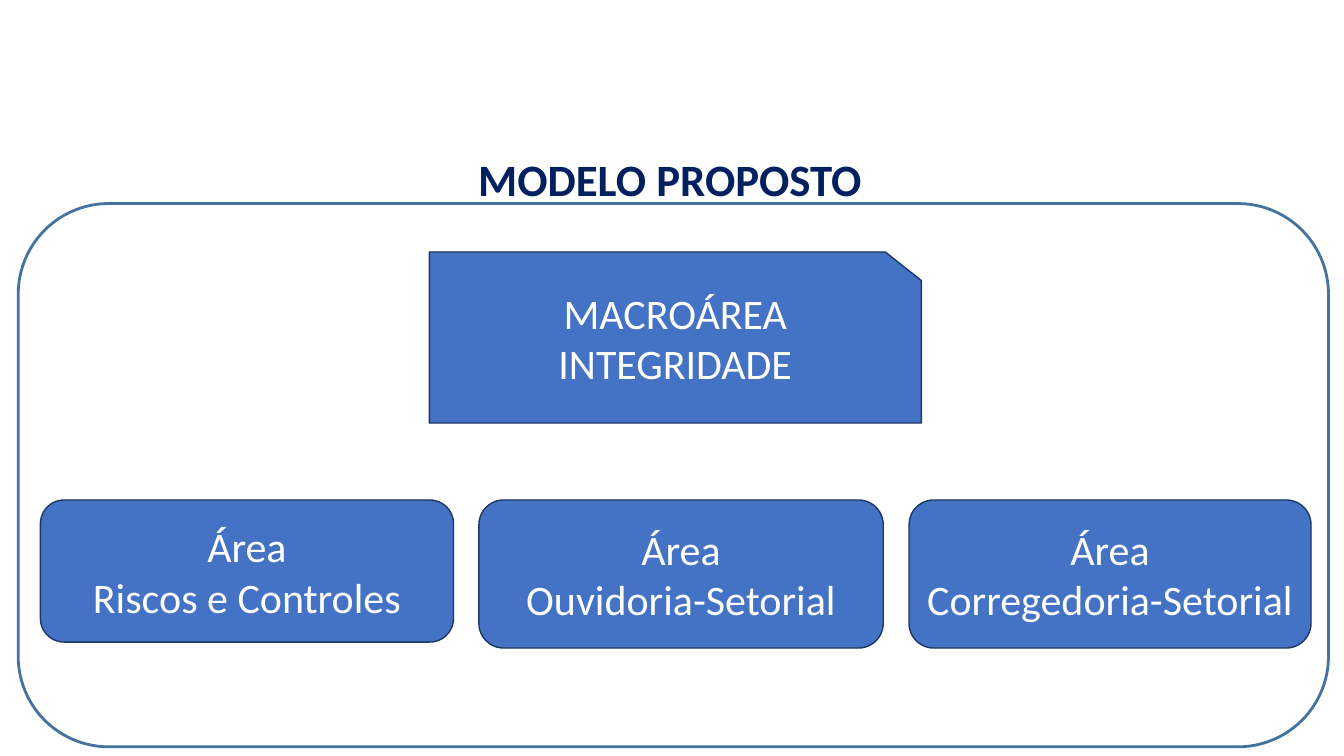
from dataclasses import dataclass

from pptx import Presentation
from pptx import util as u
from pptx.dml.color import RGBColor
from pptx.enum import shapes, text
from pptx.shapes.autoshape import Shape
from pptx.slide import Slide

NAVY = RGBColor(0x00, 0x20, 0x60)
BLUE = RGBColor(0x44, 0x72, 0xC4)
DARK_BLUE = RGBColor(0x1F, 0x37, 0x63)
FRAME_BLUE = RGBColor(0x43, 0x73, 0x9E)
WHITE = RGBColor(0xFF, 0xFF, 0xFF)
FONT = "Calibri"
AREA_TOP = 12.6


@dataclass(frozen=True)
class Area:
    """One area box; lengths in centimetres."""
    name: str
    left: float
    width: float
    height: float


AREAS = (
    Area("Riscos e Controles", 1.02, 10.41, 3.58),
    Area("Ouvidoria-Setorial", 12.07, 10.19, 3.73),
    Area("Corregedoria-Setorial", 22.91, 10.13, 3.73),
)


def write_lines(sp: Shape, lines: tuple[str, ...], size: float,
                color: RGBColor, bold: bool = False) -> None:
    """Put each line in its own centred paragraph."""
    tf = sp.text_frame
    tf.word_wrap = True
    tf.text = "\n".join(lines)
    for p in tf.paragraphs:
        p.alignment = text.PP_ALIGN.CENTER
        p.font.name = FONT
        p.font.size = u.Pt(size)
        p.font.bold = bold
        p.font.color.rgb = color


def style_box(sp: Shape, lines: tuple[str, ...]) -> None:
    sp.shadow.inherit = False
    sp.fill.solid()
    sp.fill.fore_color.rgb = BLUE
    sp.line.color.rgb = DARK_BLUE
    sp.line.width = u.Pt(1)
    sp.text_frame.vertical_anchor = text.MSO_ANCHOR.MIDDLE
    write_lines(sp, lines, 30, WHITE)


def add_title(s: Slide) -> None:
    sp = s.shapes.add_textbox(u.Cm(-0.05), u.Cm(0.05), u.Cm(33.87), u.Cm(5.15))
    tf = sp.text_frame
    tf.vertical_anchor = text.MSO_ANCHOR.BOTTOM
    tf.margin_bottom = 0
    write_lines(sp, ("MODELO PROPOSTO",), 32, NAVY, bold=True)
    tf.paragraphs[0].line_spacing = 0.9


def add_frame(s: Slide) -> None:
    sp = s.shapes.add_shape(shapes.MSO_SHAPE.ROUNDED_RECTANGLE,
                            u.Cm(0.46), u.Cm(5.13), u.Cm(33.02), u.Cm(13.69))
    sp.shadow.inherit = False
    sp.fill.background()
    sp.line.color.rgb = FRAME_BLUE
    sp.line.width = u.Pt(2)


def add_macro_area(s: Slide) -> None:
    """Draw the box with its top right corner cut off."""
    left, top, right, bottom = u.Cm(10.82), u.Cm(6.35), u.Cm(23.22), u.Cm(10.66)
    builder = s.shapes.build_freeform(left, top)
    builder.add_line_segments([
        (right - u.Cm(0.91), top), (right, top + u.Cm(0.72)),
        (right, bottom), (left, bottom),
    ], close=True)
    style_box(builder.convert_to_shape(), ("MACROÁREA", "INTEGRIDADE"))


def add_area(s: Slide, area: Area) -> None:
    sp = s.shapes.add_shape(shapes.MSO_SHAPE.FLOWCHART_ALTERNATE_PROCESS,
                            u.Cm(area.left), u.Cm(AREA_TOP),
                            u.Cm(area.width), u.Cm(area.height))
    style_box(sp, ("Área", area.name))


def main() -> None:
    prs = Presentation()
    prs.slide_width, prs.slide_height = u.Cm(33.87), u.Cm(19.05)
    s = prs.slides.add_slide(prs.slide_layouts[6])
    add_title(s)
    add_frame(s)
    add_macro_area(s)
    for area in AREAS:
        add_area(s, area)
    prs.save("out.pptx")


if __name__ == "__main__":
    main()
